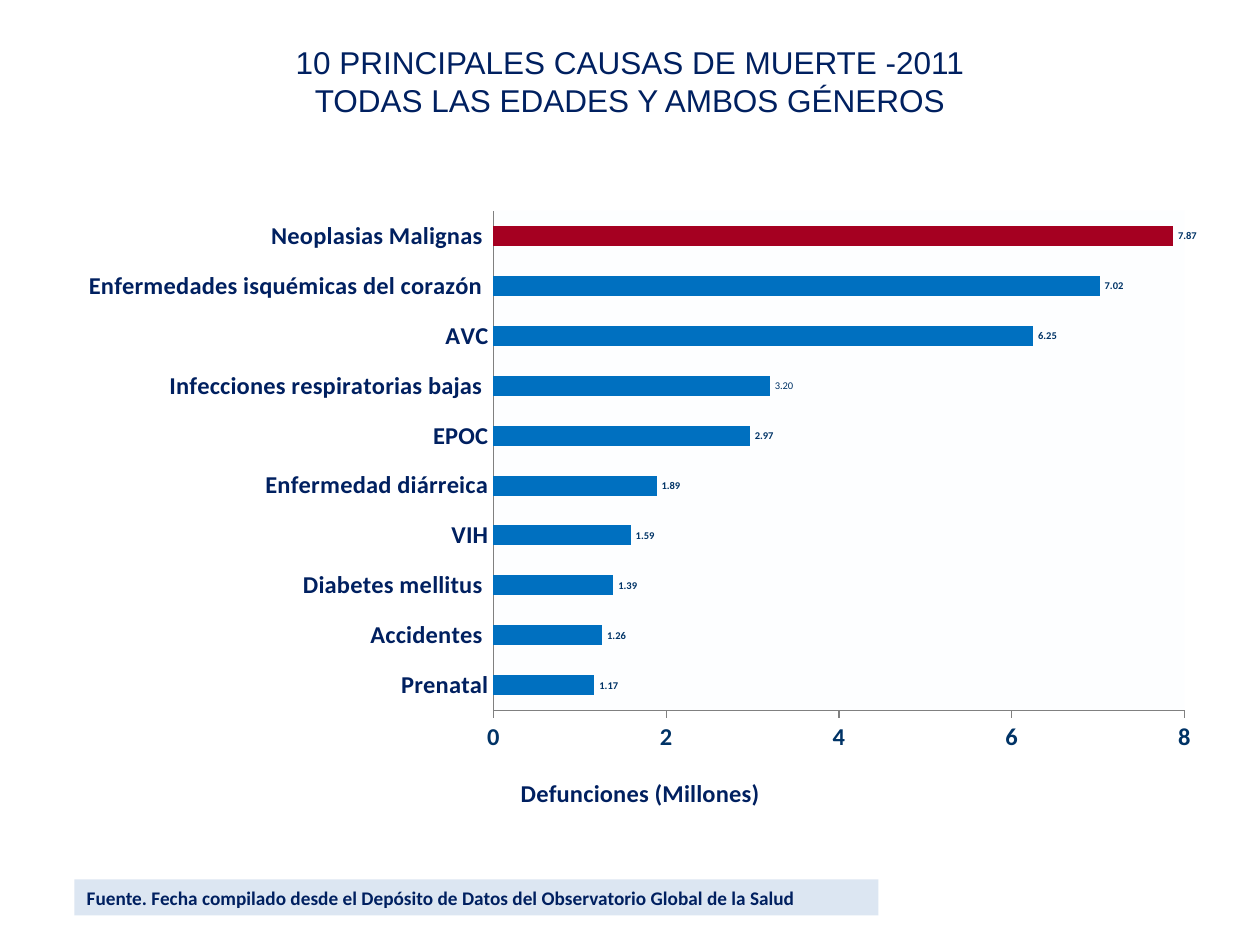
from typing import NamedTuple

import pptx
import pptx.chart.data
import pptx.dml.color
import pptx.enum.chart
import pptx.enum.shapes
import pptx.enum.text
import pptx.oxml
import pptx.oxml.ns
import pptx.util

Pt = pptx.util.Pt
RGB = pptx.dml.color.RGBColor
NAVY = RGB(0x00, 0x20, 0x60)
SLATE = RGB(0x00, 0x33, 0x66)
BLUE = RGB(0x00, 0x70, 0xC0)
RED = RGB(0xA5, 0x00, 0x21)
PALE = RGB(0xDC, 0xE6, 0xF2)
GRAY = RGB(0x80, 0x80, 0x80)
BLACK = RGB(0, 0, 0)


class Cause(NamedTuple):
    name: str
    deaths: float
    color: RGB = BLUE
    bold: bool = True


CAUSES = [
    Cause("Prenatal", 1.17),
    Cause("Accidentes ", 1.26),
    Cause("Diabetes mellitus ", 1.39),
    Cause("VIH", 1.59),
    Cause("Enfermedad diárreica", 1.89),
    Cause("EPOC", 2.97),
    Cause("Infecciones respiratorias bajas ", 3.2, bold=False),
    Cause("AVC", 6.25),
    Cause("Enfermedades isquémicas del corazón ", 7.02),
    Cause("Neoplasias Malignas ", 7.87, RED),
]


def style(font, size: float, color: RGB, bold: bool = False,
          face: str = "Calibri") -> None:
    font.size = Pt(size)
    font.bold = bold
    font.name = face
    font.color.rgb = color


def write(frame, text: str, *, center: bool = False, **look) -> None:
    """Fill a text frame; a vertical tab in the text is a line break."""
    align = pptx.enum.text.PP_ALIGN
    frame.word_wrap = True
    frame.vertical_anchor = pptx.enum.text.MSO_ANCHOR.MIDDLE
    par = frame.paragraphs[0]
    par.text = text
    par.alignment = align.CENTER if center else align.LEFT
    for run in par.runs:
        style(run.font, **look)


def layout(x: float, y: float, size: str = ""):
    """Manual chart layout, in fractions of the chart's own size."""
    inner = '<c:layoutTarget val="inner"/>' if size else ""
    return pptx.oxml.parse_xml(
        f'<c:layout {pptx.oxml.ns.nsdecls("c")}><c:manualLayout>{inner}'
        '<c:xMode val="edge"/><c:yMode val="edge"/>'
        f'<c:x val="{x}"/><c:y val="{y}"/>{size}</c:manualLayout></c:layout>')


def place(parent, node) -> None:
    """Put the layout in the parent, in place of any it has."""
    tag = pptx.oxml.ns.qn("c:layout")
    for old in parent.findall(tag):
        parent.remove(old)
    text = parent.find(pptx.oxml.ns.qn("c:tx"))
    parent.insert(0 if text is None else 1, node)


def set_axes(chart) -> None:
    marks = pptx.enum.chart.XL_TICK_MARK
    cat, val = chart.category_axis, chart.value_axis
    for axis, tick, color in ((cat, marks.NONE, NAVY),
                              (val, marks.OUTSIDE, SLATE)):
        axis.has_major_gridlines = False
        axis.major_tick_mark = tick
        axis.minor_tick_mark = marks.NONE
        axis.format.line.color.rgb = GRAY
        axis.format.line.width = Pt(0.75)
        style(axis.tick_labels.font, 14, color, True)
    val.minimum_scale, val.maximum_scale, val.major_unit = 0, 8, 2
    val.tick_labels.number_format = "0"
    val.tick_labels.number_format_is_linked = False
    title = val.axis_title
    write(title.text_frame, "Defunciones (Millones)", center=True,
          size=14, color=NAVY, bold=True)
    place(title._element, layout(0.4, 0.94))


def set_bars(plot) -> None:
    plot.gap_width, plot.overlap = 150, -25
    plot.vary_by_categories = False
    bars = plot.series[0]
    bars.format.fill.solid()
    bars.format.fill.fore_color.rgb = BLUE
    tags = bars.data_labels
    tags.show_value = True
    tags.number_format = "0.00"
    tags.number_format_is_linked = False
    tags.position = pptx.enum.chart.XL_LABEL_POSITION.OUTSIDE_END
    style(tags.font, 6, SLATE, True)
    for i, cause in enumerate(CAUSES):
        if cause.color != BLUE:
            fill = bars.points[i].format.fill
            fill.solid()
            fill.fore_color.rgb = cause.color
        if not cause.bold:
            tag = bars.points[i].data_label
            style(tag.font, 6, SLATE)
            tag.position = tags.position


def add_bars(slide) -> None:
    data = pptx.chart.data.CategoryChartData(number_format="0.00")
    data.categories = [cause.name for cause in CAUSES]
    data.add_series("Series 1", [cause.deaths for cause in CAUSES])
    chart = slide.shapes.add_chart(
        pptx.enum.chart.XL_CHART_TYPE.BAR_CLUSTERED,
        Pt(36), Pt(110), Pt(648), Pt(356.5), data).chart
    chart.has_title = chart.has_legend = False
    style(chart.font, 18, BLACK)
    set_axes(chart)
    set_bars(chart.plots[0])
    area = chart._chartSpace.chart.plotArea
    place(area, layout(0.38, 0.03, '<c:w val="0.61"/><c:h val="0.81"/>'))
    area.append(pptx.oxml.parse_xml(
        f'<c:spPr {pptx.oxml.ns.nsdecls("c", "a")}><a:solidFill>'
        '<a:srgbClr val="E1F4FF"><a:alpha val="5000"/></a:srgbClr>'
        '</a:solidFill><a:ln><a:noFill/></a:ln></c:spPr>'))


def main() -> None:
    deck = pptx.Presentation()
    deck.slide_width, deck.slide_height = Pt(720), Pt(540)
    slide = deck.slides.add_slide(deck.slide_layouts[6])
    title = slide.shapes.add_textbox(Pt(0), Pt(1), Pt(720), Pt(90))
    write(title.text_frame, "10 PRINCIPALES CAUSAS DE MUERTE -2011\v"
          "TODAS LAS EDADES Y AMBOS GÉNEROS",
          center=True, size=18, color=NAVY, face="Arial")
    add_bars(slide)
    source = slide.shapes.add_shape(
        pptx.enum.shapes.MSO_SHAPE.RECTANGLE,
        Pt(42.5), Pt(502.5), Pt(459.5), Pt(20.6))
    source.shadow.inherit = False
    source.fill.solid()
    source.fill.fore_color.rgb = PALE
    source.line.fill.background()
    write(source.text_frame, "Fuente. Fecha compilado desde el Depósito de "
          "Datos del Observatorio Global de la Salud",
          size=11, color=NAVY, bold=True)
    deck.save("out.pptx")


if __name__ == "__main__":
    main()
